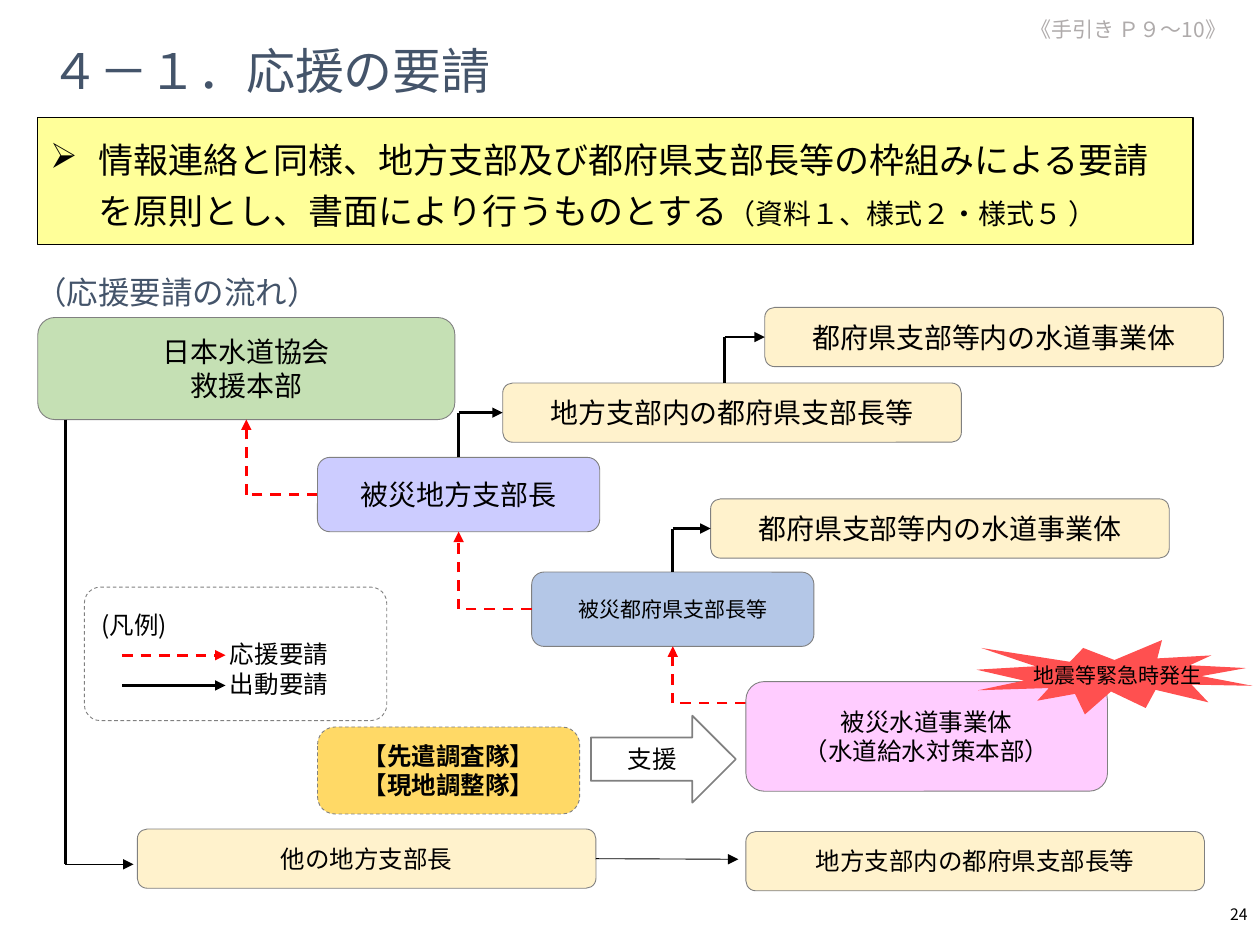
from lxml.etree import SubElement
from pptx import Presentation
from pptx.dml.color import RGBColor
from pptx.enum.dml import MSO_LINE
from pptx.enum.shapes import MSO_CONNECTOR, MSO_SHAPE
from pptx.enum.text import MSO_ANCHOR, MSO_AUTO_SIZE, PP_ALIGN
from pptx.oxml.ns import qn
from pptx.util import Inches, Pt

FONT = "Noto Sans CJK JP"
BLACK, RED, GREY, SLATE, CREAM = "000000", "FF0000", "808080", "44546A", "FFF2CC"
LEFT = 0.3                        # left margin of title, rule box and headquarters
COLUMN_2, COLUMN_3 = 2.52, 5.92   # shared left edges in the flow
WIDE, MEDIUM = (3.64, 0.47), (2.24, 0.59)
TOP_SIDE, LEFT_SIDE, BOTTOM_SIDE, RIGHT_SIDE = range(4)


def color(value):
    return RGBColor.from_string(value)


def apply(target, values):
    for name, value in values.items():
        setattr(target, name, value)


def place(element, left, top, width, height):
    apply(element, {"left": Inches(left), "top": Inches(top),
                    "width": Inches(width), "height": Inches(height)})


def write(shape, paragraphs, size, ink=BLACK, align=PP_ALIGN.CENTER, bold=False, wrap=True):
    """Each paragraph is a string, or a list of (text, size) runs."""
    frame = shape.text_frame
    apply(frame, {"word_wrap": wrap, "auto_size": MSO_AUTO_SIZE.NONE,
                  "vertical_anchor": MSO_ANCHOR.MIDDLE})
    for index, content in enumerate(paragraphs):
        paragraph = frame.paragraphs[0] if index == 0 else frame.add_paragraph()
        paragraph.alignment = align
        runs = [(content, size)] if isinstance(content, str) else content
        for text, run_size in runs:
            run = paragraph.add_run()
            run.text = text
            run.font.color.rgb = color(ink)
            apply(run.font, {"size": Pt(run_size), "bold": bold, "name": FONT})
            SubElement(run.font._element, qn("a:ea"), typeface=FONT)
    return frame.paragraphs


def add_label(slide, bounds, text, size, ink=BLACK, align=PP_ALIGN.LEFT):
    label = slide.shapes.add_textbox(*map(Inches, bounds))
    write(label, [text], size, ink, align)


def add_box(slide, bounds, fill=None, kind=MSO_SHAPE.ROUNDED_RECTANGLE,
            outline=GREY, weight=0.5, dashed=False, corner=None):
    box = slide.shapes.add_shape(kind, *map(Inches, bounds))
    box.shadow.inherit = False
    if fill:
        box.fill.solid()
        box.fill.fore_color.rgb = color(fill)
    else:
        box.fill.background()
    if outline:
        box.line.color.rgb = color(outline)
        box.line.width = Pt(weight)
    else:
        box.line.fill.background()
    if dashed:
        box.line.dash_style = MSO_LINE.DASH
    if corner is not None:
        box.adjustments[0] = corner
    return box


def add_node(slide, bounds, fill, lines, size, bold=False, **style):
    node = add_box(slide, bounds, fill, **style)
    write(node, lines, size, bold=bold)
    return node


def point_of(end):
    """An end is an (x, y) point in inches, or a (box, side) pair."""
    if isinstance(end[0], (int, float)):
        return end
    box, side = end
    across, down = [(0.5, 0), (0, 0.5), (0.5, 1), (1, 0.5)][side]
    return ((box.left + box.width * across) / Inches(1),
            (box.top + box.height * down) / Inches(1))


def add_line(slide, start, end, ink=BLACK, weight=1.5, dashed=False, arrow=True):
    points = point_of(start) + point_of(end)
    line = slide.shapes.add_connector(MSO_CONNECTOR.STRAIGHT, *map(Inches, points))
    line.line.color.rgb = color(ink)
    line.line.width = Pt(weight)
    if dashed:
        line.line.dash_style = MSO_LINE.DASH
    if arrow:
        SubElement(line.line._get_or_add_ln(), qn("a:tailEnd"), type="triangle")
    SubElement(line._element.spPr, qn("a:effectLst"))
    for end_point, connect in ((start, line.begin_connect), (end, line.end_connect)):
        if not isinstance(end_point[0], (int, float)):
            connect(*end_point)


def add_dispatch(slide, source, target, last_weight=1.5):
    """Solid black: vertically from the source, then across to the target."""
    corner = (point_of(source)[0], point_of(target)[1])
    add_line(slide, source, corner, arrow=False)
    add_line(slide, corner, target, weight=last_weight)


def add_request(slide, source, target):
    """Dashed red: across from the source, then up to the target."""
    corner = (point_of(target)[0], point_of(source)[1])
    add_line(slide, source, corner, RED, dashed=True, arrow=False)
    add_line(slide, corner, target, RED, dashed=True)


def add_heading(slide):
    title = slide.shapes.title
    place(title, LEFT, 0.17, 6.96, 0.77)
    write(title, ["４－１．応援の要請"], 28, SLATE, PP_ALIGN.LEFT)
    add_label(slide, (7.91, 0, 1.92, 0.47), "《手引き Ｐ９～10》", 12, "AFABAB", PP_ALIGN.RIGHT)
    add_label(slide, (7.75, 7.06, 2.25, 0.4), "24", 9, align=PP_ALIGN.RIGHT)
    add_label(slide, (0.18, 2.08, 9.58, 0.47), "（応援要請の流れ）", 18, SLATE)

    # Rule with an arrowhead bullet
    rule = add_box(slide, (LEFT, 0.93, 9.17, 1.01), "FFFF99", MSO_SHAPE.RECTANGLE, BLACK, 0.75)
    statement = write(rule, [[
        ("情報連絡と同様、地方支部及び都府県支部長等の枠組みによる要請を原則とし、"
         "書面により行うものとする", 20),
        ("（資料１、様式２・様式５ ）", 16)]], 20, align=PP_ALIGN.LEFT)[0]
    apply(statement, {"line_spacing": 1.2, "space_before": Pt(10)})
    properties = statement._p.get_or_add_pPr()
    properties.set("marL", str(Inches(0.38)))
    properties.set("indent", str(-Inches(0.38)))
    SubElement(properties, qn("a:buChar"), char="➢")


def add_legend(slide):
    legend = add_box(slide, (0.67, 4.66, 2.4, 1.06), dashed=True, corner=0.12)
    entries = write(legend, ["(凡例)", "応援要請", "出動要請"], 14, align=PP_ALIGN.LEFT)
    for entry in entries[1:]:
        entry._p.get_or_add_pPr().set("marL", str(Inches(1.02)))
    add_line(slide, (0.97, 5.2), (1.79, 5.2), RED, dashed=True)
    add_line(slide, (0.97, 5.44), (1.79, 5.44))


def add_flow(slide):
    # Organisations
    headquarters = add_node(slide, (LEFT, 2.52, 3.31, 0.81), "C5E0B4",
                            ["日本水道協会", "救援本部"], 16)
    regional_head = add_node(slide, (COLUMN_2, 3.63, *MEDIUM), "CCCCFF", ["被災地方支部長"], 16)
    prefecture_head = add_node(slide, (4.22, 4.54, *MEDIUM), "B4C7E7", ["被災都府県支部長等"], 12)
    upper_utilities, lower_utilities, prefectures, other_regions, _ = [
        add_node(slide, (left, top, *WIDE), CREAM, [text], size)
        for left, top, text, size in (
            (6.07, 2.44, "都府県支部等内の水道事業体", 16),
            (5.64, 3.96, "都府県支部等内の水道事業体", 16),
            (3.99, 3.04, "地方支部内の都府県支部長等", 16),
            (1.09, 6.58, "他の地方支部長", 14),
            (COLUMN_3, 6.6, "地方支部内の都府県支部長等", 14))]

    # Requests for support
    add_request(slide, (regional_head, LEFT_SIDE), (headquarters, BOTTOM_SIDE))
    add_request(slide, (prefecture_head, LEFT_SIDE), (regional_head, BOTTOM_SIDE))
    add_request(slide, (COLUMN_3, 5.58), (prefecture_head, BOTTOM_SIDE))

    # Requests for dispatch
    add_dispatch(slide, (regional_head, TOP_SIDE), (prefectures, LEFT_SIDE))
    add_dispatch(slide, (5.75, 3.04), (upper_utilities, LEFT_SIDE))
    add_dispatch(slide, (prefecture_head, TOP_SIDE), (lower_utilities, LEFT_SIDE))
    add_dispatch(slide, (0.52, 3.33), (1.06, 6.86), last_weight=0.5)
    add_line(slide, (other_regions, RIGHT_SIDE), (5.86, 6.82), weight=0.5)

    # Field teams, their support, and the stricken utility
    add_node(slide, (COLUMN_2, 5.77, 2.08, 0.69), "FFD966", ["【先遣調査隊】", "【現地調整隊】"],
             14, bold=True, dashed=True, corner=0.2)
    add_node(slide, (4.69, 5.68, 1.15, 0.69), None, ["支援"], 14,
             kind=MSO_SHAPE.RIGHT_ARROW, weight=1)
    add_node(slide, (COLUMN_3, 5.41, 2.87, 0.87), "FFCCFF",
             ["被災水道事業体", "（水道給水対策本部）"], 14)
    emergency = add_box(slide, (7.75, 5.08, 2.19, 0.59), "FF5050",
                        MSO_SHAPE.EXPLOSION1, outline=None)
    write(emergency, ["地震等緊急時発生"], 12, wrap=False)
    apply(emergency.text_frame, {"margin_left": Inches(0.08), "margin_right": 0,
                                 "margin_top": 0, "margin_bottom": 0})


def main():
    deck = Presentation()
    apply(deck, {"slide_width": Inches(10), "slide_height": Inches(7.5)})
    slide = deck.slides.add_slide(deck.slide_layouts[5])
    add_heading(slide)
    add_flow(slide)
    add_legend(slide)
    deck.save("out.pptx")


if __name__ == "__main__":
    main()
